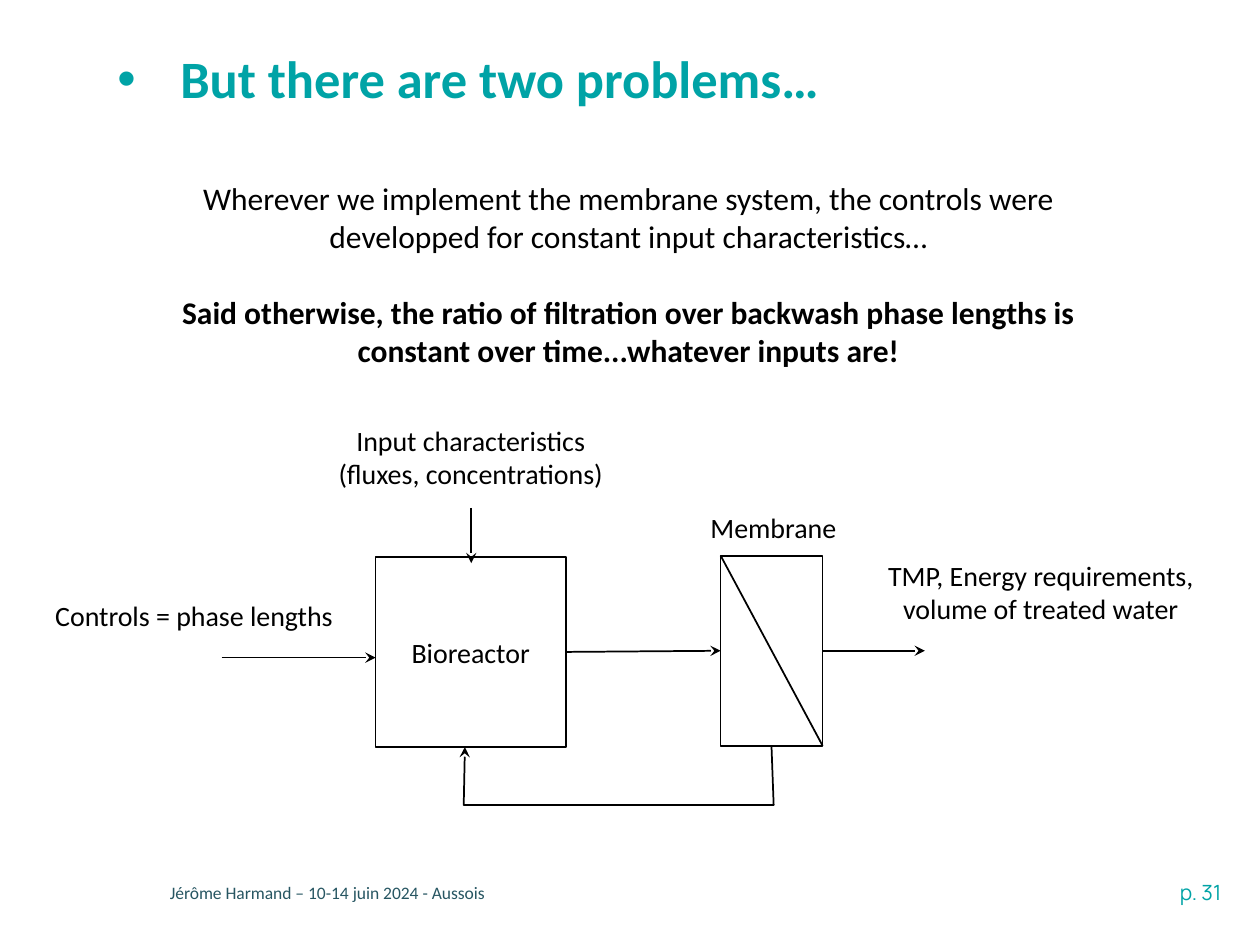
"""Build a slide showing a bioreactor and membrane loop and its control problem."""
from lxml import etree
from pptx import Presentation
from pptx import util as u
from pptx.dml.color import RGBColor
from pptx.enum import shapes, text
from pptx.oxml import ns

Pt = u.Pt
TEAL = RGBColor(0x00, 0xA3, 0xA6)
NAVY = RGBColor(0x27, 0x56, 0x62)
BLACK = RGBColor(0, 0, 0)
WHITE = RGBColor(255, 255, 255)
LEFT, CENTER, RIGHT = text.PP_ALIGN.LEFT, text.PP_ALIGN.CENTER, text.PP_ALIGN.RIGHT

TITLE = "But there are two problems…"
MESSAGES = [
    "Wherever we implement the membrane system, the controls were developped for constant input characteristics…",
    "Said otherwise, the ratio of filtration over backwash phase lengths is constant over time...whatever inputs are!",
]
LABELS = [
    (["Input characteristics", "(fluxes, concentrations)"], (185, 238.3, 168, 46), CENTER, True),
    (["TMP, Energy requirements, volume of treated water"], (483.8, 315.4, 222, 46), CENTER, True),
    (["Controls = phase lengths"], (24.5, 338.4, 175, 26.6), LEFT, False),
    (["Membrane"], (398.9, 288, 87, 26.6), LEFT, False),
]
MEMBRANE = (411.8, 317.5, 58.3, 108.7)
BIOREACTOR = (214.6, 318.2, 108.7, 108.7)
RECYCLE = [(440.9, 426.9), (442.1, 460), (265, 460), (265.7, 426.9)]


def add_text(page, lines, area, size, color=BLACK, font="Calibri", align=LEFT, wrap=True):
    box = page.shapes.add_textbox(*map(Pt, area))
    frame = box.text_frame
    frame.word_wrap = wrap
    frame.text = "\n".join(lines)
    for para in frame.paragraphs:
        para.alignment = align
        style(para, size, color, font)
    return frame


def style(para, size, color, font="Calibri", bold=False):
    para.font.size, para.font.name, para.font.bold = Pt(size), font, bold
    para.font.color.rgb = color


def add_title(page):
    title = page.shapes.title
    title.left, title.top, title.width, title.height = map(Pt, (67, 11.5, 603.4, 69.8))
    frame = title.text_frame
    frame.text = TITLE
    frame.auto_size = text.MSO_AUTO_SIZE.NONE
    frame.vertical_anchor = text.MSO_ANCHOR.MIDDLE
    frame.margin_left = 0
    para = frame.paragraphs[0]
    props = para._p.get_or_add_pPr()
    props.set("marL", str(Pt(36)))
    props.set("indent", str(-Pt(36)))
    bullet_color = etree.SubElement(props, ns.qn("a:buClr"))
    etree.SubElement(bullet_color, ns.qn("a:srgbClr"), val=str(TEAL))
    etree.SubElement(props, ns.qn("a:buFont"), typeface="Arial")
    etree.SubElement(props, ns.qn("a:buChar"), char="•")
    para.alignment, para.line_spacing = LEFT, 0.9
    style(para, 30, TEAL, bold=True)


def add_unit(page, area):
    unit = page.shapes.add_shape(shapes.MSO_SHAPE.RECTANGLE, *map(Pt, area))
    unit.shadow.inherit = False
    unit.fill.solid()
    unit.fill.fore_color.rgb = WHITE
    outline(unit)
    return unit


def outline(item, arrow=False):
    item.line.color.rgb = BLACK
    item.line.width = Pt(1)
    if arrow:
        etree.SubElement(item.line._get_or_add_ln(), ns.qn("a:tailEnd"), type="stealth")


def add_line(page, start, end, arrow=True):
    line = page.shapes.add_connector(shapes.MSO_CONNECTOR.STRAIGHT, *map(Pt, start + end))
    outline(line, arrow)
    etree.SubElement(line._element.spPr, ns.qn("a:effectLst"))
    return line


def add_diagram(page):
    membrane = add_unit(page, MEMBRANE)
    reactor = add_unit(page, BIOREACTOR)
    reactor.text_frame.text = "Bioreactor"
    para = reactor.text_frame.paragraphs[0]
    para.alignment = CENTER
    style(para, 16, BLACK)

    left, top, width, height = MEMBRANE
    right, middle = left + width, top + height / 2
    add_line(page, (left, top), (right, top + height), arrow=False)
    outlet = add_line(page, (right, middle), (528.5, middle))
    outlet.begin_connect(membrane, 3)
    feed = add_line(page, (323.3, middle), (left, middle))
    feed.begin_connect(reactor, 3)
    feed.end_connect(membrane, 1)

    points = [(Pt(x), Pt(y)) for x, y in RECYCLE]
    builder = page.shapes.build_freeform(*points[0])
    builder.add_line_segments(points[1:], close=False)
    recycle = builder.convert_to_shape()
    recycle.shadow.inherit = False
    recycle.fill.background()
    outline(recycle, arrow=True)

    add_line(page, (126.7, 375.8), (BIOREACTOR[0], 375.8))
    add_line(page, (269.3, 290.2), (269.3, 321.8))
    for lines, area, align, wrap in LABELS:
        add_text(page, lines, area, 16, align=align, wrap=wrap)


def main():
    deck = Presentation()
    deck.slide_width, deck.slide_height = Pt(720), Pt(540)
    page = deck.slides.add_slide(deck.slide_layouts[5])
    add_text(page, ["p. 31"], (540.7, 499, 164.2, 21.6), 12, TEAL, "Manrope", RIGHT)
    add_text(page, ["Jérôme Harmand – 10-14 juin 2024 - Aussois"], (90, 500.4, 528.5, 19.4), 10, NAVY)
    add_title(page)
    message = add_text(page, MESSAGES, (69.8, 98.6, 578.9, 116.6), 18, align=CENTER)
    message.paragraphs[1].space_before = Pt(22)
    message.paragraphs[1].font.bold = True
    add_diagram(page)
    deck.save("out.pptx")


if __name__ == "__main__":
    main()
